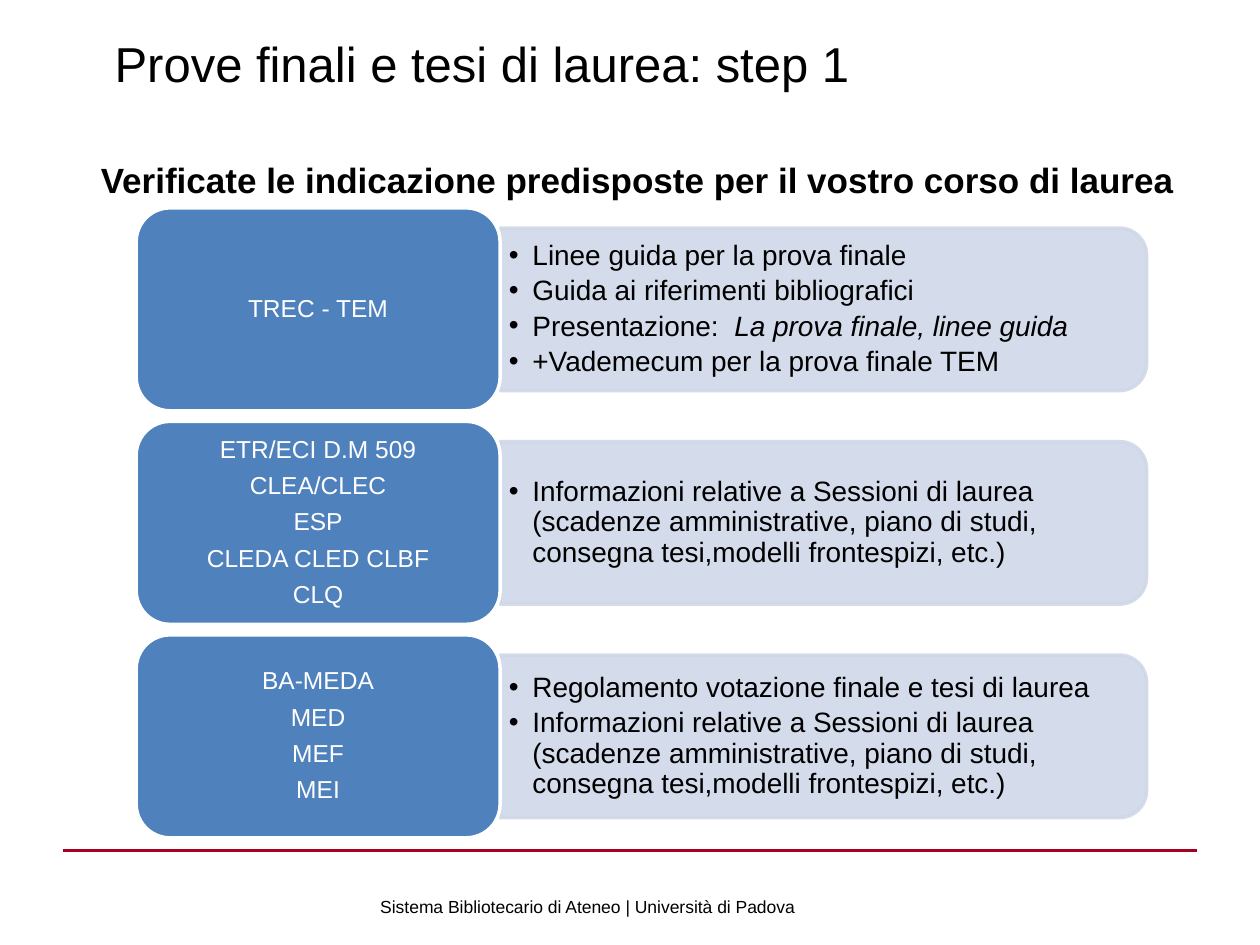
import lxml.etree
import pptx
import pptx.dml.color
import pptx.enum.shapes
import pptx.enum.text
import pptx.oxml.ns
import pptx.util

Pt = pptx.util.Pt
RGB = pptx.dml.color.RGBColor
SHAPE = pptx.enum.shapes.MSO_SHAPE
ALIGN = pptx.enum.text.PP_ALIGN
ANCHOR = pptx.enum.text.MSO_ANCHOR
AUTOSIZE = pptx.enum.text.MSO_AUTO_SIZE
qn = pptx.oxml.ns.qn

BLACK = RGB(0x00, 0x00, 0x00)
WHITE = RGB(0xFF, 0xFF, 0xFF)
BLUE = RGB(0x4F, 0x81, 0xBD)
PALE_BLUE = RGB(0xD0, 0xD8, 0xE8)
CRIMSON = RGB(0xA5, 0x00, 0x21)

# Row layout in points
TOP, PITCH = 118.8, 122
CARD_LEFT, CARD_W, CARD_H = 77.8, 208, 116
PANEL_LEFT, PANEL_W, PANEL_H = 285.8, 369.4, 92.9
LIST_W, LIST_H = 365, 83.5

SESSIONS = ("Informazioni relative a Sessioni di laurea (scadenze amministrative, "
            "piano di studi, consegna tesi,modelli frontespizi, etc.)")

# Degree courses and their documents; asterisks enclose italics
ROWS = [
    (["TREC - TEM"],
     ["Linee guida per la prova finale",
      "Guida ai riferimenti bibliografici",
      "Presentazione:  *La prova finale, linee guida*",
      "+Vademecum per la prova finale TEM"]),
    (["ETR/ECI D.M 509", "CLEA/CLEC", "ESP", "CLEDA CLED CLBF", "CLQ"],
     [SESSIONS]),
    (["BA-MEDA", "MED", "MEF", "MEI"],
     ["Regolamento votazione finale e tesi di laurea", SESSIONS]),
]


def place(sp, left, top, width, height):
    sp.left, sp.top, sp.width, sp.height = Pt(left), Pt(top), Pt(width), Pt(height)


def add_bullet(p, indent=13.5):
    p.level = 1
    pPr = p._p.get_or_add_pPr()
    pPr.set("marL", str(Pt(indent)))
    pPr.set("indent", str(-Pt(indent)))
    lxml.etree.SubElement(pPr, qn("a:buFont")).set("typeface", "Arial")
    lxml.etree.SubElement(pPr, qn("a:buChar")).set("char", "•")


def write_text(sp, lines, size, color=BLACK, bold=False, align=ALIGN.LEFT,
               anchor=ANCHOR.TOP, margins=(7.2, 3.6), spacing=1.0, after=0,
               bullets=False, wrap=True):
    tf = sp.text_frame
    tf.auto_size = AUTOSIZE.NONE
    tf.word_wrap = wrap
    tf.vertical_anchor = anchor
    tf.margin_left = tf.margin_right = Pt(margins[0])
    tf.margin_top = tf.margin_bottom = Pt(margins[1])
    for i, line in enumerate(lines):
        p = tf.paragraphs[0] if i == 0 else tf.add_paragraph()
        p.alignment = align
        p.line_spacing = spacing
        p.space_before, p.space_after = Pt(0), Pt(after)
        if bullets:
            add_bullet(p)
        for j, piece in enumerate(line.split("*")):
            if piece:
                r = p.add_run()
                r.text = piece
                r.font.name, r.font.size = "Arial", Pt(size)
                r.font.bold, r.font.italic = bold, j % 2 == 1
                r.font.color.rgb = color


def add_box(s, kind, left, top, width, height, fill, line):
    sp = s.shapes.add_shape(kind, Pt(left), Pt(top), Pt(width), Pt(height))
    sp.shadow.inherit = False
    sp.fill.solid()
    sp.fill.fore_color.rgb = fill
    sp.line.color.rgb = line
    sp.line.width = Pt(2)
    return sp


def add_panel(s, middle):
    # A tall shape turned a quarter, so its rounded end faces right
    center = PANEL_LEFT + PANEL_W / 2
    sp = add_box(s, SHAPE.ROUND_2_SAME_RECTANGLE, center - PANEL_H / 2,
                 middle - PANEL_W / 2, PANEL_H, PANEL_W, PALE_BLUE, PALE_BLUE)
    sp.rotation = 90
    for clr in sp.element.spPr.iter(qn("a:srgbClr")):
        lxml.etree.SubElement(clr, qn("a:alpha")).set("val", "90000")


def add_row(s, body, top, courses, documents):
    middle = top + CARD_H / 2
    add_panel(s, middle)
    # Bring the list in front of its panel
    s.shapes.element.append(body.element)
    place(body, PANEL_LEFT, middle - LIST_H / 2, LIST_W, LIST_H)
    write_text(body, documents, 16, anchor=ANCHOR.MIDDLE, margins=(5, 2.2),
               spacing=0.9, after=3, bullets=True)
    card = add_box(s, SHAPE.ROUNDED_RECTANGLE, CARD_LEFT, top, CARD_W, CARD_H,
                   BLUE, WHITE)
    write_text(card, courses, 14, WHITE, align=ALIGN.CENTER, anchor=ANCHOR.MIDDLE,
               margins=(4.3, 2.2), spacing=0.9, after=5.6)


def add_rule(s, left, right, y):
    line = s.shapes.add_connector(pptx.enum.shapes.MSO_CONNECTOR.STRAIGHT,
                                  Pt(left), Pt(y), Pt(right), Pt(y))
    line.line.color.rgb = CRIMSON
    line.line.width = Pt(1.5)
    lxml.etree.SubElement(line.element.spPr, qn("a:effectLst"))


def main():
    prs = pptx.Presentation()
    prs.slide_width, prs.slide_height = Pt(720), Pt(540)
    s = prs.slides.add_slide(prs.slide_layouts.get_by_name("Comparison"))
    title, heading, *bodies = s.placeholders

    # Title and heading
    place(title, 58.3, 15.8, 671.8, 90)
    write_text(title, ["Prove finali e tesi di laurea: step 1"], 28)
    place(heading, 50.4, 87.1, 632.2, 31.7)
    write_text(heading, ["Verificate le indicazione predisposte per il vostro corso di laurea"],
               20, bold=True, wrap=False)

    # Courses with their documents
    for i, (courses, documents) in enumerate(ROWS):
        add_row(s, bodies[i], TOP + i * PITCH, courses, documents)

    # Footer
    add_rule(s, 36, 684, 486)
    footer = s.shapes.add_textbox(Pt(210.2), Pt(491.8), Pt(282.2), Pt(36))
    write_text(footer, ["Sistema Bibliotecario di Ateneo | Università di Padova"], 10,
               anchor=ANCHOR.BOTTOM)

    prs.save("out.pptx")


if __name__ == "__main__":
    main()
